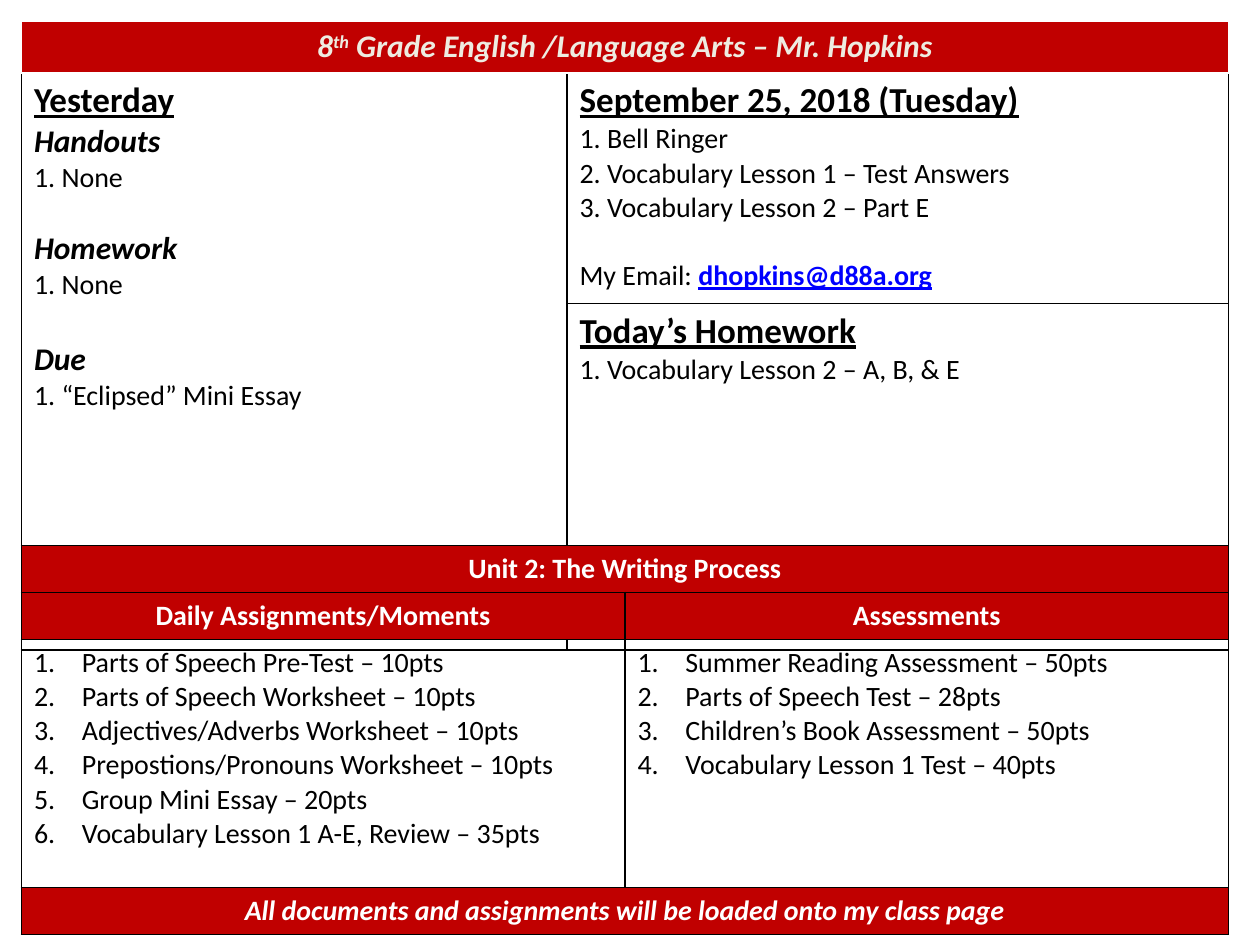
from lxml.etree import SubElement
from pptx import Presentation
from pptx.dml.color import RGBColor
from pptx.enum.text import PP_ALIGN
from pptx.oxml.ns import qn
from pptx.util import Inches, Pt

RED, CREAM, WHITE, BLACK, BLUE = "C00000", "EEECE1", "FFFFFF", "000000", "0000FF"
LEFT, WIDTH = 0.17, 9.58

HEADING = dict(size=20, bold=True, underline=True)
SUBHEADING = dict(size=18, bold=True, italic=True)
TITLE = dict(size=18, bold=True, italic=True, color=CREAM)
BAND = dict(bold=True, color=WHITE)
FOOTER = dict(bold=True, italic=True, color=WHITE)
EMAIL = dict(bold=True, underline=True, color=BLUE)
PLAIN = {}

title = [("8", TITLE), ("th", dict(TITLE, baseline=30000)),
         (" Grade English /Language Arts – Mr. Hopkins", TITLE)]
yesterday = [
    ([("Yesterday", HEADING)], 0),
    ([("Handouts", SUBHEADING)], 0),
    ([("1. None", PLAIN)], 0),
    ([("Homework", SUBHEADING)], 19.5),
    ([("1. None", PLAIN)], 0),
    ([("Due", SUBHEADING)], 22),
    ([("1. “Eclipsed” Mini Essay", PLAIN)], 0),
]
today = [
    ([("September 25, 2018 (Tuesday)", HEADING)], 0),
    ([("1. Bell Ringer", PLAIN)], 0),
    ([("2. Vocabulary Lesson 1 – Test Answers", PLAIN)], 0),
    ([("3. Vocabulary Lesson 2 – Part E", PLAIN)], 0),
    ([("My Email: ", PLAIN), ("dhopkins@d88a.org", EMAIL)], 19.5),
]
homework = [
    ([("Today’s Homework", HEADING)], 0),
    ([("1. Vocabulary Lesson 2 – A, B, & E", PLAIN)], 0),
]
unit = "Unit 2: The Writing Process"
columns = ["Daily Assignments/Moments", "Assessments"]
lists = [
    ["Parts of Speech Pre-Test – 10pts", "Parts of Speech Worksheet – 10pts",
     "Adjectives/Adverbs Worksheet – 10pts", "Prepostions/Pronouns Worksheet – 10pts",
     "Group Mini Essay – 20pts", "Vocabulary Lesson 1 A-E, Review – 35pts"],
    ["Summer Reading Assessment – 50pts", "Parts of Speech Test – 28pts",
     "Children’s Book Assessment – 50pts", "Vocabulary Lesson 1 Test – 40pts"],
]
footer = "All documents and assignments will be loaded onto my class page"


def rgb(value):
    return RGBColor.from_string(value)


def add_border(cell):
    properties = cell._tc.get_or_add_tcPr()
    for position, side in enumerate(("a:lnL", "a:lnR", "a:lnT", "a:lnB")):
        line = SubElement(properties, qn(side), w=str(Pt(1)))
        fill = SubElement(line, qn("a:solidFill"))
        SubElement(fill, qn("a:srgbClr"), val=BLACK)
        properties.remove(line)
        properties.insert(position, line)


def add_table(slide, top, widths, heights, bordered=True):
    frame = slide.shapes.add_table(len(heights), len(widths), Inches(LEFT), Inches(top),
                                   Inches(WIDTH), Inches(sum(heights)))
    table = frame.table
    table.first_row = table.horz_banding = False
    for column, width in zip(table.columns, widths):
        column.width = Inches(width)
    for row, height in zip(table.rows, heights):
        row.height = Inches(height)
    for cell in table.iter_cells():
        cell.fill.background()
        if bordered:
            add_border(cell)
    return table


def add_runs(paragraph, runs):
    for text, style in runs:
        run = paragraph.add_run()
        run.text = text
        font = run.font
        font.name = "Calibri"
        font.size = Pt(style.get("size", 16))
        font.bold = style.get("bold", False)
        font.italic = style.get("italic", False)
        font.underline = style.get("underline", False)
        font.color.rgb = rgb(style.get("color", BLACK))
        if "baseline" in style:
            run._r.get_or_add_rPr().set("baseline", str(style["baseline"]))


def fill_cell(cell, content, numbered=False):
    frame = cell.text_frame
    for index, (runs, gap) in enumerate(content):
        paragraph = frame.add_paragraph() if index else frame.paragraphs[0]
        if gap:
            paragraph.space_before = Pt(gap)
        if numbered:
            properties = paragraph._p.get_or_add_pPr()
            properties.set("marL", str(Inches(0.38)))
            properties.set("indent", str(-Inches(0.38)))
            SubElement(properties, qn("a:buFont"), typeface="+mj-lt")
            SubElement(properties, qn("a:buAutoNum"), type="arabicPeriod")
        add_runs(paragraph, runs)


def fill_band(cell, runs):
    cell.fill.solid()
    cell.fill.fore_color.rgb = rgb(RED)
    fill_cell(cell, [(runs, 0)])
    cell.text_frame.paragraphs[0].alignment = PP_ALIGN.CENTER


presentation = Presentation()
presentation.slide_width, presentation.slide_height = Inches(10), Inches(7.5)
slide = presentation.slides.add_slide(presentation.slide_layouts[6])

agenda = add_table(slide, 0.58, [4.33, 5.25], [1.83, 1.83])
agenda.cell(0, 0).merge(agenda.cell(1, 0))
fill_cell(agenda.cell(0, 0), yesterday)
fill_cell(agenda.cell(0, 1), today)
fill_cell(agenda.cell(1, 1), homework)

banner = add_table(slide, 0.17, [WIDTH], [0.41], bordered=False)
fill_band(banner.cell(0, 0), title)

unit_table = add_table(slide, 4.33, [WIDTH / 2] * 2, [0.37, 0.37, 1.97, 0.37])
for row, text, style in ((0, unit, BAND), (3, footer, FOOTER)):
    unit_table.cell(row, 0).merge(unit_table.cell(row, 1))
    fill_band(unit_table.cell(row, 0), [(text, style)])
for column, (heading, items) in enumerate(zip(columns, lists)):
    fill_band(unit_table.cell(1, column), [(heading, BAND)])
    fill_cell(unit_table.cell(2, column), [([(item, PLAIN)], 0) for item in items], numbered=True)

presentation.save("out.pptx")
